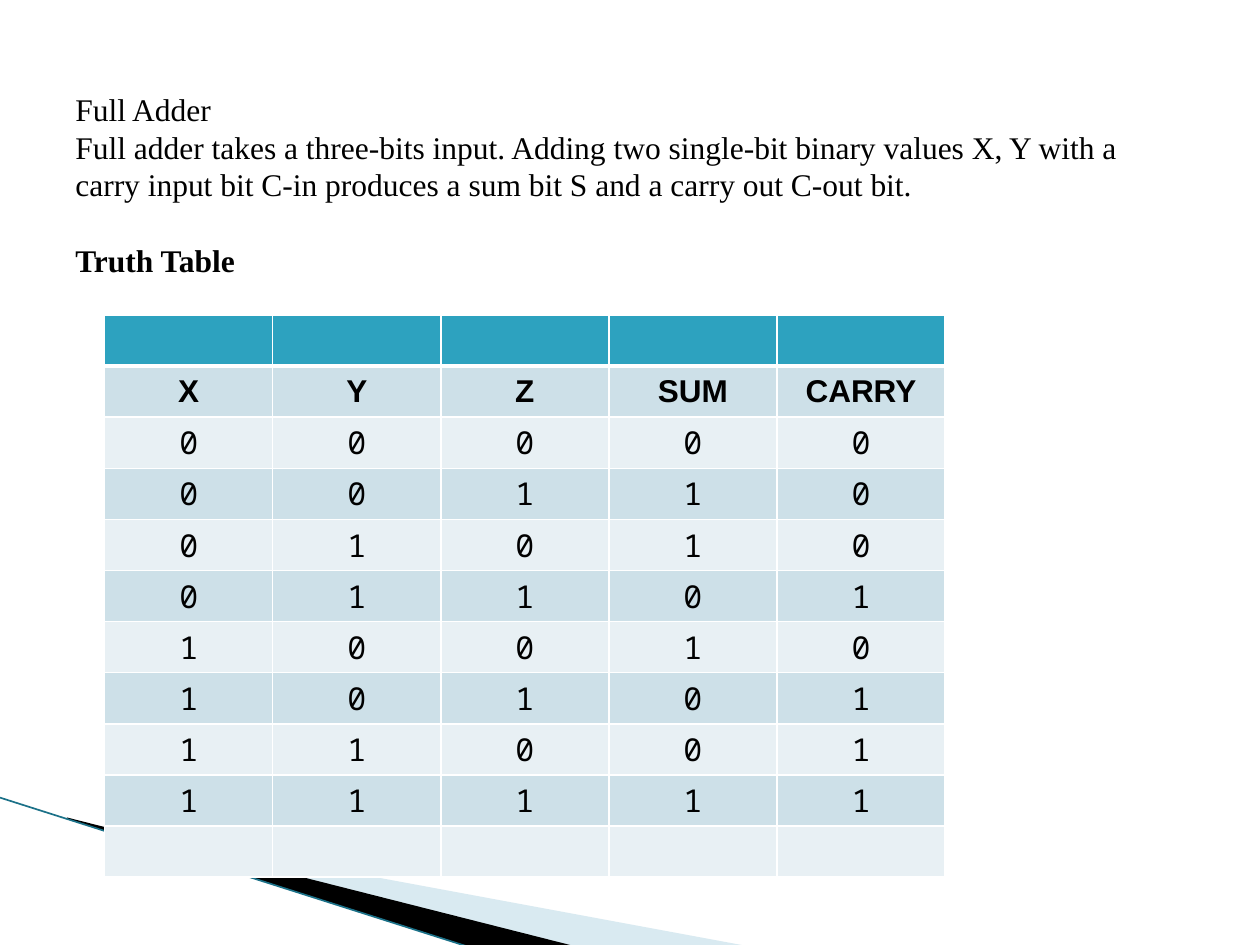
from dataclasses import dataclass
from itertools import product

from lxml.etree import SubElement
from pptx import Presentation
from pptx.dml.color import RGBColor
from pptx.enum.shapes import MSO_CONNECTOR
from pptx.enum.text import MSO_ANCHOR, PP_ALIGN
from pptx.oxml.ns import qn
from pptx.util import Cm, Pt


@dataclass(frozen=True)
class Theme:
    black: str = "000000"
    white: str = "FFFFFF"
    pale: str = "A0CBDC"
    edge: str = "1B7188"
    header: str = "2DA2BF"
    bands: tuple = ("CDE0E8", "E8F0F4")
    serif: str = "Times New Roman"
    sans: str = "Arial"
    mono: str = "Noto Sans Mono"
    size: int = 18
    leading: float = 21.5


THEME = Theme()


def rgb(value):
    return RGBColor.from_string(value)


def set_font(font, name, bold=False):
    for key, value in dict(name=name, size=Pt(THEME.size), bold=bold).items():
        setattr(font, key, value)
    font.color.rgb = rgb(THEME.black)


def add_wedge(s, left, top, points, color, alpha=None):
    spots = [(Cm(left + x), Cm(top + y)) for x, y in points]
    fb = s.shapes.build_freeform(*spots[0])
    fb.add_line_segments(spots[1:], close=True)
    sp = fb.convert_to_shape()
    sp.shadow.inherit = False
    sp.line.fill.background()
    sp.fill.solid()
    sp.fill.fore_color.rgb = rgb(color)
    if alpha:
        clr = sp.fill._xPr.find(".//" + qn("a:srgbClr"))
        SubElement(clr, qn("a:alpha"), val=str(alpha * 1000))


def add_swoosh(s, left, top, width, height):
    add_wedge(s, left, top,
              [(1.4, 0.46), (width, height), (11.58, height), (1.4, 0.43)],
              THEME.pale, alpha=40)
    add_wedge(s, left, top,
              [(1.35, 0.4), (11.61, height), (9.45, height), (1.37, 0.43)],
              THEME.black)
    edge = s.shapes.add_connector(MSO_CONNECTOR.STRAIGHT, Cm(left), Cm(top),
                                  Cm(left + 9.42), Cm(top + height))
    edge.line.color.rgb = rgb(THEME.edge)
    edge.line.width = Pt(0.95)
    SubElement(edge._element.spPr, qn("a:effectLst"))


def add_intro(s, left, top, width, height):
    tf = s.shapes.add_textbox(Cm(left), Cm(top), Cm(width), Cm(height)).text_frame
    tf.word_wrap = True
    lines = [
        ("Full Adder", False, 0),
        ("Full adder takes a three-bits input. Adding two single-bit binary values "
         "X, Y with a carry input bit C-in produces a sum bit S and a carry out "
         "C-out bit.", False, 0),
        ("Truth Table", True, THEME.leading),
    ]
    for i, (text, bold, before) in enumerate(lines):
        p = tf.add_paragraph() if i else tf.paragraphs[0]
        p.line_spacing = Pt(THEME.leading)
        if before:
            p.space_before = Pt(before)
        r = p.add_run()
        r.text = text
        set_font(r.font, THEME.serif, bold)


def style_cell(cell, fill, bottom=1):
    tcPr = cell._tc.get_or_add_tcPr()
    for side, width in dict(L=1, R=1, T=1, B=bottom).items():
        ln = SubElement(tcPr, qn(f"a:ln{side}"), w=str(Pt(width)))
        SubElement(SubElement(ln, qn("a:solidFill")), qn("a:srgbClr"), val=THEME.white)
    cell.fill.solid()
    cell.fill.fore_color.rgb = rgb(fill)


def write_cell(cell, text, name, bold):
    for side in ("left", "right", "top", "bottom"):
        setattr(cell, f"margin_{side}", 0)
    cell.vertical_anchor = MSO_ANCHOR.MIDDLE
    p = cell.text_frame.paragraphs[0]
    p.alignment = PP_ALIGN.CENTER
    r = p.add_run()
    r.text = text
    set_font(r.font, name, bold)


def add_truth_table(s, left, top, width, height):
    titles = ["X", "Y", "Z", "SUM", "CARRY"]
    bits = [(*xyz, sum(xyz) % 2, sum(xyz) // 2) for xyz in product((0, 1), repeat=3)]
    blank = [""] * len(titles)
    rows = [blank, titles, *bits, blank]
    table = s.shapes.add_table(len(rows), len(titles), Cm(left), Cm(top),
                               Cm(width), Cm(height)).table
    table.horz_banding = False
    for column in table.columns:
        column.width = Cm(width / len(titles))
    for i, values in enumerate(rows):
        table.rows[i].height = Cm(height / len(rows))
        name, bold = (THEME.sans, True) if i == 1 else (THEME.mono, False)
        for j, value in enumerate(values):
            cell = table.cell(i, j)
            if i == 0:
                style_cell(cell, THEME.header, bottom=3)
            else:
                style_cell(cell, THEME.bands[(i - 1) % 2])
            if value != "":
                write_cell(cell, str(value), name, bold)


def main():
    prs = Presentation()
    prs.slide_width, prs.slide_height = Cm(25.4), Cm(19.05)
    s = prs.slides.add_slide(prs.slide_layouts[6])
    add_swoosh(s, 0, 16.08, 15.11, 3)
    add_intro(s, 1.27, 1.7, 22.66, 4.88)
    add_truth_table(s, 2.11, 6.35, 16.94, 11.33)
    prs.save("out.pptx")


if __name__ == "__main__":
    main()
